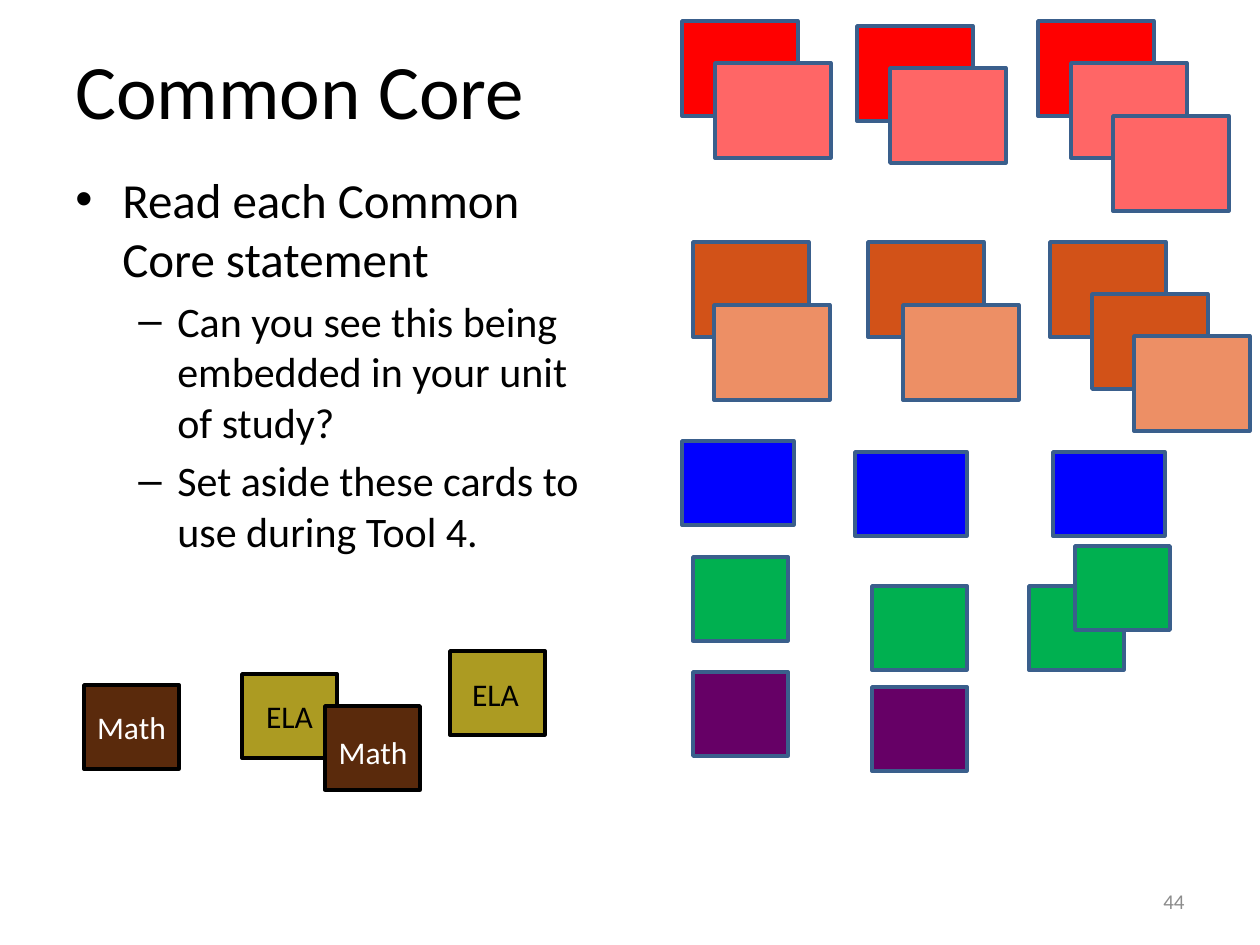
"""Build the Common Core slide with its stacks of coloured cards."""
import pptx
import pptx.dml.color
import pptx.enum.shapes
import pptx.enum.text
import pptx.util
import lxml.etree

ALIGN = pptx.enum.text.PP_ALIGN
ANCHOR = pptx.enum.text.MSO_ANCHOR


def px(n):
    return pptx.util.Emu(round(n * 914400 / 126))


def color(hex_value):
    return pptx.dml.color.RGBColor.from_string(hex_value)


class Deck:
    font = "Calibri"
    outline = "3A5F8C"

    def __init__(self, width, height):
        self.prs = pptx.Presentation()
        self.prs.slide_width, self.prs.slide_height = px(width), px(height)
        self.s = self.prs.slides.add_slide(self.prs.slide_layouts[6])

    def run(self, p, text, size, ink="000000"):
        r = p.add_run()
        r.text = text
        r.font.name = self.font
        r.font.size = pptx.util.Pt(size)
        r.font.color.rgb = color(ink)

    def text(self, x, y, w, h, text="", size=18, ink="000000",
             align=ALIGN.LEFT, anchor=ANCHOR.TOP, wrap=True):
        tf = self.s.shapes.add_textbox(px(x), px(y), px(w), px(h)).text_frame
        tf.word_wrap = wrap
        tf.vertical_anchor = anchor
        p = tf.paragraphs[0]
        p.alignment = align
        if text:
            self.run(p, text, size, ink)
        return tf

    def bullets(self, x, y, w, h, items):
        tf = self.text(x, y, w, h)
        for i, (level, text) in enumerate(items):
            mark, size, margin, hang = (("•", 28, 47, 47), ("–", 24, 102, 39))[level]
            p = tf.add_paragraph() if i else tf.paragraphs[0]
            p.level = level
            p.space_before = pptx.util.Pt(size * 0.2)
            self.run(p, text, size)
            pPr = p._p.get_or_add_pPr()
            pPr.set("marL", str(px(margin)))
            pPr.set("indent", str(px(-hang)))
            ns = pptx.oxml.ns.qn
            lxml.etree.SubElement(pPr, ns("a:buFont")).set("typeface", "Arial")
            lxml.etree.SubElement(pPr, ns("a:buChar")).set("char", mark)

    def card(self, x, y, w, h, fill, line=outline, label="", ink="000000"):
        rect = pptx.enum.shapes.MSO_SHAPE.RECTANGLE
        sp = self.s.shapes.add_shape(rect, px(x), px(y), px(w), px(h))
        sp.shadow.inherit = False
        sp.fill.solid()
        sp.fill.fore_color.rgb = color(fill)
        sp.line.color.rgb = color(line)
        sp.line.width = pptx.util.Pt(2)
        if label:
            tf = sp.text_frame
            tf.vertical_anchor = ANCHOR.MIDDLE
            p = tf.paragraphs[0]
            p.alignment = ALIGN.CENTER
            self.run(p, label, 18, ink)

    def cards(self, size, fill, spots):
        for x, y in spots:
            self.card(x, y, *size, fill)


def main():
    deck = Deck(1260, 945)
    deck.text(63, 10, 1134, 158, "Common Core", 44, anchor=ANCHOR.MIDDLE)
    deck.bullets(63, 163, 530, 721, [
        (0, "Read each Common Core statement"),
        (1, "Can you see this being embedded in your unit of study?"),
        (1, "Set aside these cards to use during Tool 4."),
    ])

    small, medium, large = (95, 84), (112, 84), (116, 95)
    math = {"fill": "5A2A0C", "line": "000000"}
    ela = {"fill": "AC9B22", "line": "000000"}
    deck.card(242, 674, *small, **ela, label="ELA")
    deck.card(84, 685, *small, **math, label="Math", ink="FFFFFF")
    deck.card(325, 706, *small, **math)
    deck.text(325, 727, 96, 50, "Math", ink="FFFFFF", align=ALIGN.CENTER, wrap=False)
    deck.card(450, 651, *small, **ela)
    deck.text(459, 669, 73, 50, "ELA", align=ALIGN.CENTER, wrap=False)

    red_spots = [(682, 21), (857, 26), (1038, 21)]
    pink_spots = [(x + 33, y + 42) for x, y in red_spots] + [(1113, 116)]
    for size, fill, spots in [
        (small, "660066", [(693, 672), (872, 687)]),
        (small, "00B050", [(693, 557), (872, 586), (1029, 586), (1075, 546)]),
        (medium, "0000FF", [(682, 441), (855, 452), (1053, 452)]),
        (large, "D25218", [(693, 242), (868, 242), (1050, 242), (1092, 294)]),
        (large, "ED8F65", [(714, 305), (903, 305), (1134, 336)]),
        (large, "FF0000", red_spots),
        (large, "FF6666", pink_spots),
    ]:
        deck.cards(size, fill, spots)

    deck.text(903, 876, 294, 50, "44", 12, "8C8C8C", ALIGN.RIGHT, ANCHOR.MIDDLE)
    deck.prs.save("out.pptx")


if __name__ == "__main__":
    main()
